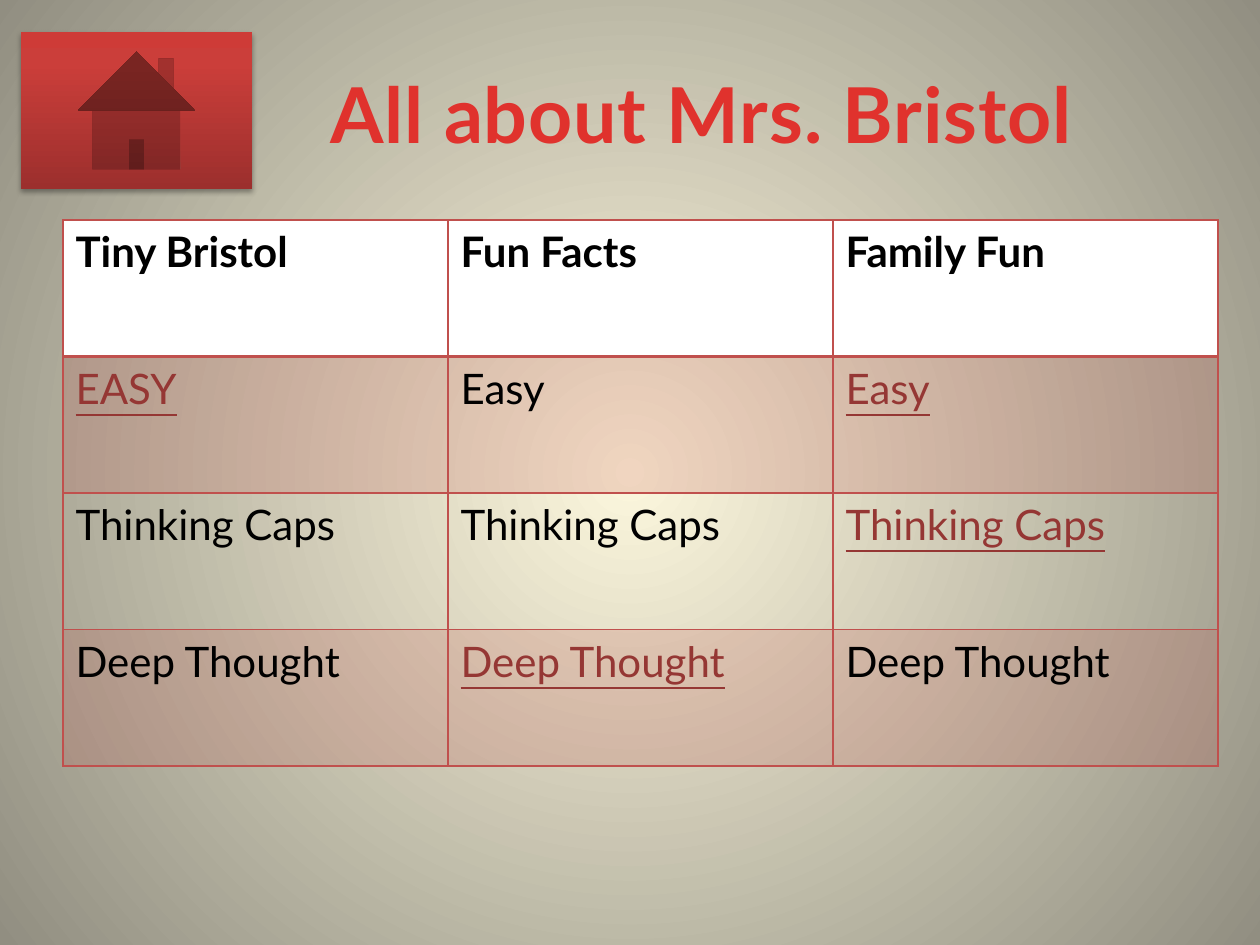
from typing import NamedTuple

from lxml.etree import SubElement
from pptx import Presentation
from pptx.dml.color import RGBColor
from pptx.enum.shapes import MSO_SHAPE as Preset
from pptx.enum.text import MSO_ANCHOR as Anchor, PP_ALIGN as Align
from pptx.oxml import parse_xml
from pptx.oxml.ns import nsdecls, qn
from pptx.util import Emu, Pt

FONT = "Lato"
RED, LINK, BLACK, WHITE = "C0504D", "953734", "000000", "FFFFFF"
Stops = list[tuple[int, str]]


class Box(NamedTuple):
    left: int
    top: int
    width: int
    height: int


class Entry(NamedTuple):
    text: str
    linked: bool = False


TITLE_BOX = Box(135, 34, 1134, 157)
HOME_BOX = Box(21, 32, 231, 157)
TABLE_BOX = Box(63, 220, 1155, 546)
ROWS = [
    [Entry("Tiny Bristol"), Entry("Fun Facts"), Entry("Family Fun")],
    [Entry("EASY", True), Entry("Easy"), Entry("Easy", True)],
    [Entry("Thinking Caps"), Entry("Thinking Caps"), Entry("Thinking Caps", True)],
    [Entry("Deep Thought"), Entry("Deep Thought", True), Entry("Deep Thought")],
]


def px(length: float) -> Emu:
    return Emu(round(length * 914400 / 126))


def color(value: str) -> RGBColor:
    return RGBColor.from_string(value)


def place(shape, box: Box) -> None:
    shape.left, shape.top, shape.width, shape.height = map(px, box)


def gradient(stops: Stops, angle: int | None = None):
    """Linear gradient at an angle, or a circle from the centre without one."""
    stop_xml = "".join(
        f'<a:gs pos="{position * 1000}"><a:srgbClr val="{value}"/></a:gs>'
        for position, value in stops)
    if angle is None:
        shade = ('<a:path path="circle"><a:fillToRect l="50000" t="50000" '
                 'r="50000" b="50000"/></a:path>')
    else:
        shade = f'<a:lin ang="{angle * 60000}" scaled="0"/>'
    return parse_xml(f'<a:gradFill {nsdecls("a")} rotWithShape="1">'
                     f'<a:gsLst>{stop_xml}</a:gsLst>{shade}</a:gradFill>')


def paint_background(slide) -> None:
    slide.background.fill.solid()
    properties = slide.element.find(".//" + qn("p:bgPr"))
    properties.replace(properties[0], gradient([(0, "FCF7DD"), (100, "918E81")]))


def add_title(slide, text: str) -> None:
    title = slide.shapes.title
    place(title, TITLE_BOX)
    frame = title.text_frame
    frame.text = text
    frame.vertical_anchor = Anchor.MIDDLE
    paragraph = frame.paragraphs[0]
    paragraph.alignment = Align.CENTER
    run = paragraph.runs[0]
    run.font.name, run.font.size, run.font.bold = FONT, Pt(44), True
    properties = run.font._element
    properties.set("spc", "50")
    properties.insert(0, gradient([(25, "E0322D"), (100, "A2201C")], 90))


def add_border(cell, side: str, width: float) -> None:
    line = SubElement(cell._tc.get_or_add_tcPr(), qn(f"a:ln{side}"), w=str(Pt(width)))
    fill = SubElement(line, qn("a:solidFill"))
    SubElement(fill, qn("a:srgbClr"), val=RED)


def fill_cell(cell, row: int) -> None:
    if row == 0:
        cell.fill.solid()
        cell.fill.fore_color.rgb = color(WHITE)
    elif row % 2:
        cell.fill.solid()
        cell.fill.fore_color.rgb = color(RED)
        tint = cell._tc.tcPr.find(".//" + qn("a:solidFill") + "[last()]")
        SubElement(cell._tc.tcPr.find(qn("a:solidFill"))[0], qn("a:alpha"), val="20000")
    else:
        cell.fill.background()


def write_cell(cell, entry: Entry, header: bool) -> None:
    cell.text_frame.text = entry.text
    font = cell.text_frame.paragraphs[0].runs[0].font
    font.name, font.size = FONT, Pt(24)
    font.bold, font.underline = header, entry.linked
    font.color.rgb = color(LINK if entry.linked else BLACK)


def add_question_table(slide, rows: list[list[Entry]]) -> None:
    row_count, column_count = len(rows), len(rows[0])
    table = slide.shapes.add_table(row_count, column_count, *map(px, TABLE_BOX)).table
    table.first_row = table.horz_banding = False
    for column in table.columns:
        column.width = px(TABLE_BOX.width / column_count)
    for row_index, entries in enumerate(rows):
        table.rows[row_index].height = px(TABLE_BOX.height / row_count)
        for column_index, entry in enumerate(entries):
            cell = table.cell(row_index, column_index)
            write_cell(cell, entry, row_index == 0)
            # The line under the header is twice as thick
            for side in "LRTB":
                thick = (row_index, side) in ((0, "B"), (1, "T"))
                add_border(cell, side, 2 if thick else 1)
            fill_cell(cell, row_index)


def add_home_button(slide) -> None:
    button = slide.shapes.add_shape(Preset.ACTION_BUTTON_HOME, *map(px, HOME_BOX))
    button.fill.solid()
    button.line.fill.background()
    button.shadow.inherit = False
    properties = button._element.spPr
    properties.replace(properties.find(qn("a:solidFill")), gradient(
        [(0, "9C2F2D"), (80, "CB3E3A"), (100, "CE3B37")], 270))
    # Soft shadow straight below
    shadow = SubElement(properties.find(qn("a:effectLst")), qn("a:outerShdw"),
                        blurRad=str(Pt(3.1)), dist=str(Pt(1.8)),
                        dir="5400000", rotWithShape="0")
    shade = SubElement(shadow, qn("a:srgbClr"), val=BLACK)
    SubElement(shade, qn("a:alpha"), val="35000")


def main() -> None:
    presentation = Presentation()
    presentation.slide_width, presentation.slide_height = px(1260), px(945)
    slide = presentation.slides.add_slide(presentation.slide_layouts[5])
    paint_background(slide)
    add_title(slide, "All about Mrs. Bristol")
    add_question_table(slide, ROWS)
    add_home_button(slide)
    presentation.save("out.pptx")


if __name__ == "__main__":
    main()
